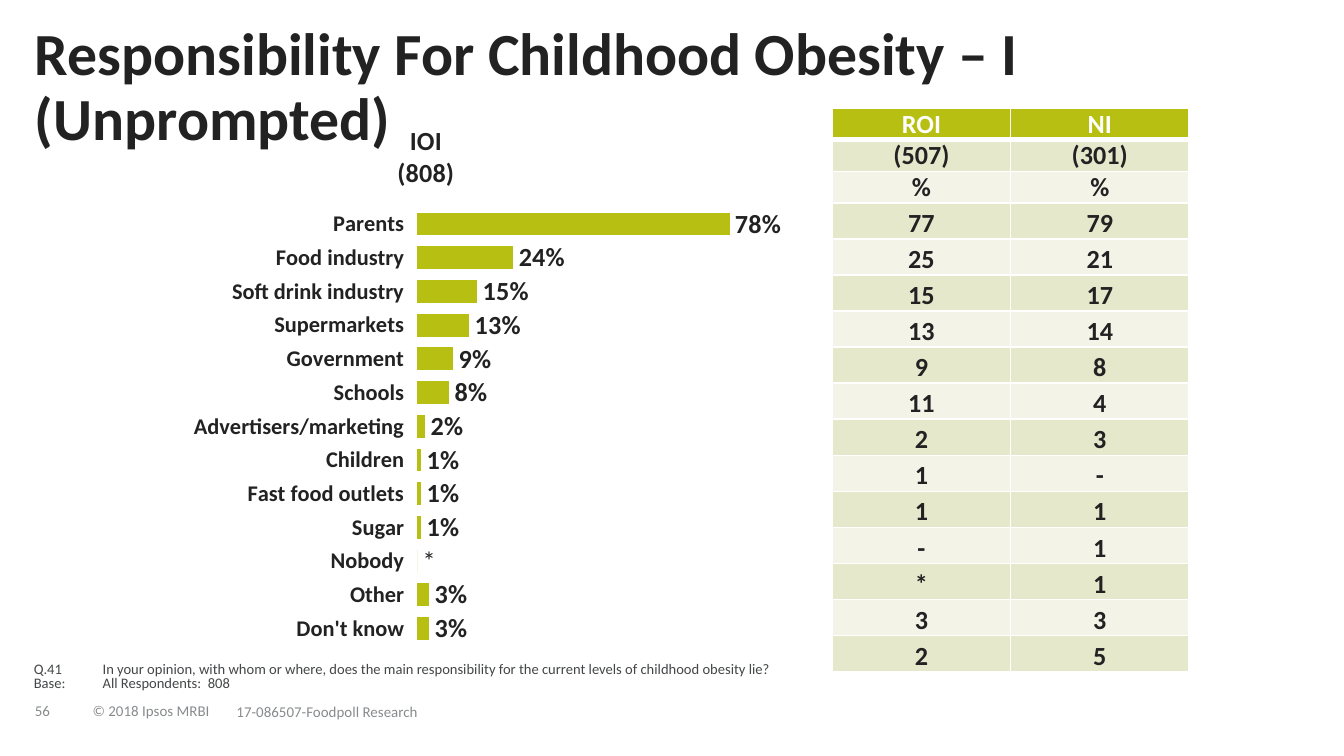
from typing import NamedTuple

from lxml.etree import SubElement
from pptx import Presentation
from pptx.chart.data import CategoryChartData
from pptx.dml.color import RGBColor
from pptx.enum.chart import XL_CHART_TYPE, XL_LABEL_POSITION, XL_TICK_MARK
from pptx.enum.text import MSO_ANCHOR, MSO_AUTO_SIZE, PP_ALIGN
from pptx.oxml import parse_xml
from pptx.oxml.ns import nsdecls, qn
from pptx.util import Cm, Pt

FONT = "Calibri"
INK, GREY, NOTE_INK = "222223", "888B8D", "444647"
GREEN, BAND_DARK, BAND_LIGHT, WHITE = "B7BF12", "E6E8CC", "F3F4E7", "FFFFFF"


class Answer(NamedTuple):
    name: str
    island: float
    roi: str
    ni: str


class Note(NamedTuple):
    left: float
    top: float
    width: float
    height: float
    lines: tuple[str, ...]
    size: float
    color: str
    spacing: float
    anchor: MSO_ANCHOR
    hanging: float = 0


ANSWERS = [
    Answer("Parents", 0.78, "77", "79"),
    Answer("Food industry", 0.24, "25", "21"),
    Answer("Soft drink industry", 0.15, "15", "17"),
    Answer("Supermarkets", 0.13, "13", "14"),
    Answer("Government", 0.09, "9", "8"),
    Answer("Schools", 0.08, "11", "4"),
    Answer("Advertisers/marketing", 0.02, "2", "3"),
    Answer("Children", 0.01, "1", "-"),
    Answer("Fast food outlets", 0.01, "1", "1"),
    Answer("Sugar", 0.01, "-", "1"),
    Answer("Nobody", 0, "*", "1"),
    Answer("Other", 0.03, "3", "3"),
    Answer("Don't know", 0.03, "2", "5"),
]
REGION_HEADS = [("ROI", "NI"), ("(507)", "(301)"), ("%", "%")]
ISLAND_HEAD = ("IOI", "(808)")

QUESTION = (
    "Q.41\tIn your opinion, with whom or where, does the main responsibility "
    "for the current levels of childhood obesity lie?"
)
NOTES = [
    Note(0.66, 13.13, 0.86, 0.66, ("56",), 8, GREY, 0.85, MSO_ANCHOR.MIDDLE),
    Note(1.75, 13.23, 2.5, 0.46, ("© 2018 Ipsos MRBI",), 8, GREY, 0.85, MSO_ANCHOR.MIDDLE),
    Note(4.47, 13.08, 6.91, 0.79, ("17-086507-Foodpoll Research",), 8, GREY, 0.85,
         MSO_ANCHOR.MIDDLE),
    Note(0.64, 12.17, 15.09, 0.89, (QUESTION, "Base:\tAll Respondents:  808"), 7.8,
         NOTE_INK, 0.8, MSO_ANCHOR.BOTTOM, 1.3),
]


def rgb(color: str) -> RGBColor:
    return RGBColor.from_string(color)


def style(font, size: float, color: str, bold: bool = False) -> None:
    font.name = FONT
    font.size = Pt(size)
    font.bold = bold
    font.color.rgb = rgb(color)


def add_run(paragraph, text: str, size: float, color: str, bold: bool = False) -> None:
    run = paragraph.add_run()
    run.text = text
    style(run.font, size, color, bold)


def clear_margins(frame) -> None:
    frame.margin_left = frame.margin_right = frame.margin_top = frame.margin_bottom = 0


def paragraphs(frame, count: int) -> list:
    """Return the frame's first paragraph and as many new ones as needed."""
    return [frame.paragraphs[0]] + [frame.add_paragraph() for _ in range(count - 1)]


def set_title(slide, text: str) -> None:
    title = slide.shapes.title
    title.left, title.top, title.width, title.height = Cm(0.66), Cm(0.46), Cm(24.03), Cm(2.46)
    frame = title.text_frame
    clear_margins(frame)
    frame.word_wrap = True
    frame.auto_size = MSO_AUTO_SIZE.SHAPE_TO_FIT_TEXT
    frame.vertical_anchor = MSO_ANCHOR.TOP
    paragraph = frame.paragraphs[0]
    paragraph.alignment = PP_ALIGN.LEFT
    paragraph.line_spacing = 0.9
    add_run(paragraph, text, 32, INK, True)


def add_note(slide, note: Note) -> None:
    box = slide.shapes.add_textbox(Cm(note.left), Cm(note.top), Cm(note.width), Cm(note.height))
    frame = box.text_frame
    clear_margins(frame)
    frame.word_wrap = True
    frame.vertical_anchor = note.anchor
    for paragraph, line in zip(paragraphs(frame, len(note.lines)), note.lines):
        paragraph.line_spacing = note.spacing
        if note.hanging:
            properties = paragraph._p.get_or_add_pPr()
            properties.set("marL", str(Cm(note.hanging)))
            properties.set("indent", str(-Cm(note.hanging)))
        add_run(paragraph, line, note.size, note.color)


def place_plot(chart, x: float, y: float, w: float, h: float) -> None:
    """Fix the inner plot area, as fractions of the chart."""
    plot_area = chart._chartSpace.chart.plotArea
    for layout in plot_area.findall(qn("c:layout")):
        plot_area.remove(layout)
    sizes = "".join(f'<c:{tag} val="{value}"/>' for tag, value in zip("xywh", (x, y, w, h)))
    plot_area.insert(0, parse_xml(
        f'<c:layout {nsdecls("c")}><c:manualLayout><c:layoutTarget val="inner"/>'
        f'<c:xMode val="edge"/><c:yMode val="edge"/>{sizes}</c:manualLayout></c:layout>'))


def add_island_chart(slide) -> None:
    data = CategoryChartData(number_format="0%")
    data.categories = [answer.name for answer in ANSWERS]
    data.add_series("\n".join(ISLAND_HEAD), [answer.island for answer in ANSWERS])
    chart = slide.shapes.add_chart(
        XL_CHART_TYPE.BAR_CLUSTERED, Cm(0), Cm(1.9), Cm(16.1), Cm(10.62), data).chart
    style(chart.font, 14, INK, True)
    chart.has_legend = False
    place_plot(chart, 0.49, 0.19, 0.47, 0.78)

    chart.has_title = True
    heading = chart.chart_title.text_frame
    for paragraph, line in zip(paragraphs(heading, len(ISLAND_HEAD)), ISLAND_HEAD):
        add_run(paragraph, line, 14, INK, True)

    categories, values = chart.category_axis, chart.value_axis
    categories.reverse_order = True
    categories.major_tick_mark = XL_TICK_MARK.OUTSIDE
    categories.format.line.fill.background()
    style(categories.tick_labels.font, 12, INK, True)
    values.minimum_scale, values.maximum_scale = 0, 1
    values.has_major_gridlines = False
    values.visible = False

    plot = chart.plots[0]
    plot.gap_width = 48
    plot.vary_by_categories = False
    series = plot.series[0]
    series.format.fill.solid()
    series.format.fill.fore_color.rgb = rgb(GREEN)
    labels = series.data_labels
    labels.show_value = True
    labels.number_format, labels.number_format_is_linked = "0%", False
    labels.position = XL_LABEL_POSITION.OUTSIDE_END
    style(labels.font, 14, INK, True)
    for index, answer in enumerate(ANSWERS):
        if answer.island == 0:
            label = series.points[index].data_label
            add_run(label.text_frame.paragraphs[0], "*", 14, INK)
            label.position = XL_LABEL_POSITION.OUTSIDE_END


def add_borders(cell, bottom: float) -> None:
    properties = cell._tc.get_or_add_tcPr()
    for side, width in (("L", 1), ("R", 1), ("T", 1), ("B", bottom)):
        line = SubElement(properties, qn(f"a:ln{side}"), w=str(Pt(width)))
        SubElement(SubElement(line, qn("a:solidFill")), qn("a:srgbClr"), val=WHITE)


def add_region_table(slide) -> None:
    rows = REGION_HEADS + [(answer.roi, answer.ni) for answer in ANSWERS]
    table = slide.shapes.add_table(
        len(rows), 2, Cm(15.73), Cm(2.05), Cm(6.74), Cm(8.87)).table
    for column in table.columns:
        column.width = Cm(3.37)
    for index, texts in enumerate(rows):
        is_top, is_head = index == 0, index < len(REGION_HEADS)
        table.rows[index].height = Cm(0.53 if is_head else 0.56)
        fill = GREEN if is_top else BAND_DARK if index % 2 else BAND_LIGHT
        for cell, text in zip(table.rows[index].cells, texts):
            add_borders(cell, 3 if is_top else 1)
            cell.fill.solid()
            cell.fill.fore_color.rgb = rgb(fill)
            cell.margin_top = cell.margin_bottom = 0
            cell.margin_left = cell.margin_right = Cm(0.25 if is_head else 0.18)
            cell.vertical_anchor = MSO_ANCHOR.TOP if is_head else MSO_ANCHOR.BOTTOM
            paragraph = cell.text_frame.paragraphs[0]
            paragraph.alignment = PP_ALIGN.CENTER
            paragraph.line_spacing = 1.0 if is_head else 1.15
            add_run(paragraph, text, 14, WHITE if is_top else INK, True)


def main() -> None:
    deck = Presentation()
    deck.slide_width, deck.slide_height = Cm(25.4), Cm(14.29)
    slide = deck.slides.add_slide(deck.slide_layouts[5])
    add_island_chart(slide)
    set_title(slide, "Responsibility For Childhood Obesity – I (Unprompted)")
    for note in NOTES:
        add_note(slide, note)
    add_region_table(slide)
    deck.save("out.pptx")


if __name__ == "__main__":
    main()
